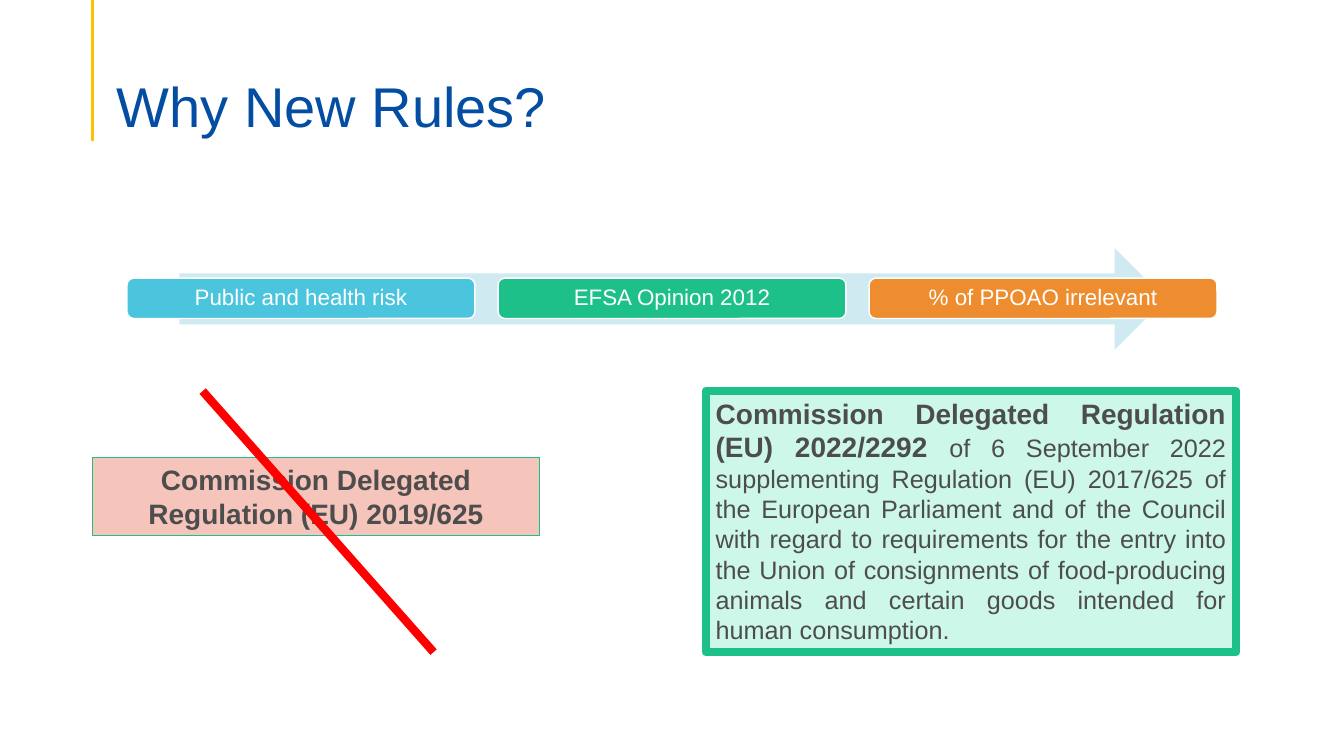
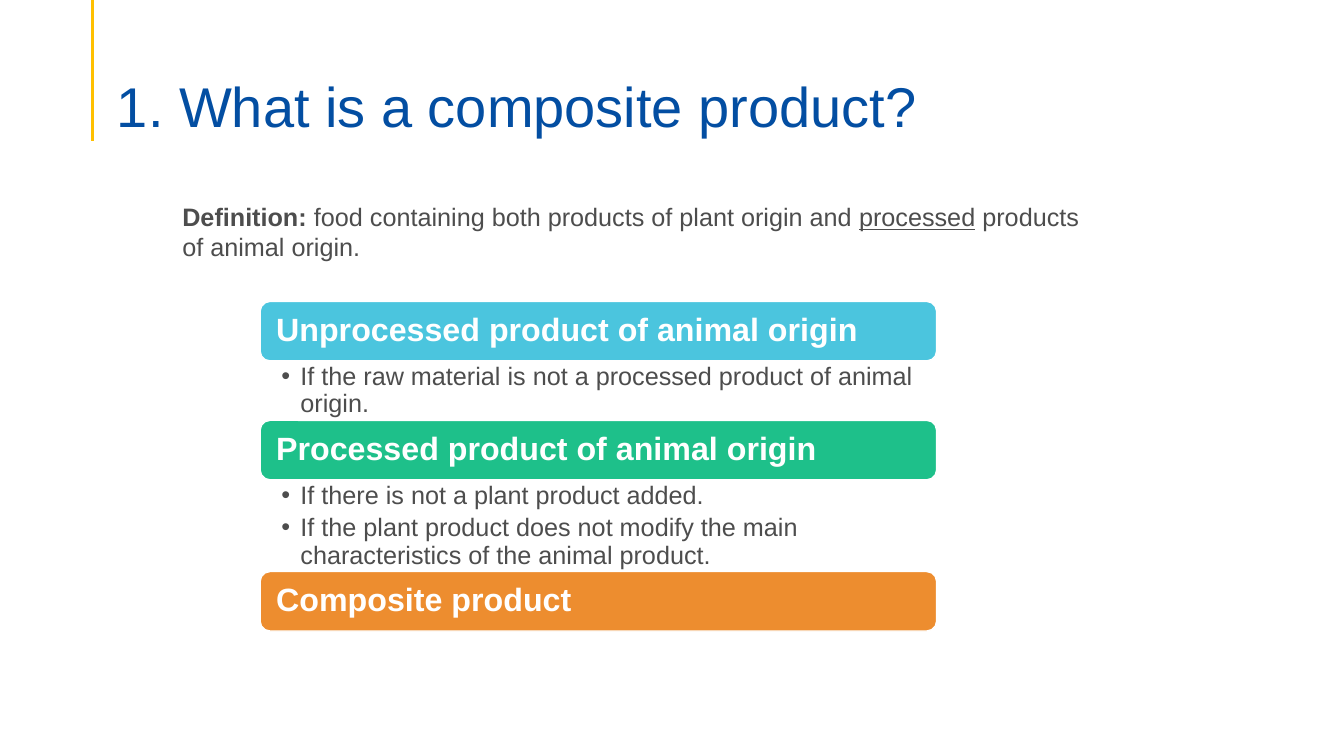
from lxml import etree
from pptx import Presentation
from pptx import util as u
from pptx.dml.color import RGBColor
from pptx.enum import shapes, text
from pptx.oxml.ns import qn

PX = u.Inches(1) // 100
FONT = "Arial"
TITLE_BLUE = RGBColor(0x03, 0x4E, 0xA2)
GOLD = RGBColor(0xFF, 0xC0, 0x00)
GREY = RGBColor(0x4D, 0x4D, 0x4D)
WHITE = RGBColor(0xFF, 0xFF, 0xFF)
CYAN = RGBColor(0x4B, 0xC5, 0xDE)
GREEN = RGBColor(0x1E, 0xC0, 0x8A)
ORANGE = RGBColor(0xED, 0x8D, 0x2F)
PALE_BLUE = RGBColor(0xD0, 0xEA, 0xF2)
PALE_RED = RGBColor(0xF5, 0xC4, 0xBA)
PALE_GREEN = RGBColor(0xCD, 0xF7, 0xE9)
RED = RGBColor(0xFF, 0x00, 0x00)

RECT = shapes.MSO_SHAPE.RECTANGLE
ROUNDED = shapes.MSO_SHAPE.ROUNDED_RECTANGLE
ALIGN = text.PP_ALIGN
ANCHOR = text.MSO_ANCHOR


def add_box(page, kind, place, fill, line=None, weight=1.0, margin=10):
    """Add a filled shape at (left, top, width, height) px, with equal side margins."""
    box = page.shapes.add_shape(kind, *[length * PX for length in place])
    box.shadow.inherit = False
    box.fill.solid()
    box.fill.fore_color.rgb = fill
    if line is None:
        box.line.fill.background()
    else:
        box.line.color.rgb = line
        box.line.width = u.Pt(weight)
    frame = box.text_frame
    frame.word_wrap = True
    frame.margin_left = frame.margin_right = margin * PX
    return box


def add_span(para, words, size, color=GREY, bold=False, underline=False):
    span = para.add_run()
    span.text = words
    span.font.name = FONT
    span.font.size = u.Pt(size)
    span.font.color.rgb = color
    span.font.bold = bold
    span.font.underline = underline


deck = Presentation()
deck.slide_width = 1333 * PX
deck.slide_height = 750 * PX
title_only, two_lists = deck.slide_layouts[5], deck.slide_layouts[3]

# Shared: title and gold rule; the red strike uses the same line settings
rules_page = deck.slides.add_slide(title_only)
product_page = deck.slides.add_slide(two_lists)

for page, heading in (
    (rules_page, "Why New Rules?"),
    (product_page, "1. What is a composite product?"),
):
    title = page.shapes.title
    title.left, title.top, title.width, title.height = [n * PX for n in (106, 53, 1150, 86)]
    frame = title.text_frame
    frame.auto_size = text.MSO_AUTO_SIZE.NONE
    frame.vertical_anchor = ANCHOR.BOTTOM
    frame.margin_bottom = 0
    para = frame.paragraphs[0]
    para.alignment = ALIGN.LEFT
    para.line_spacing = 0.9
    add_span(para, heading, 40, TITLE_BLUE)

# Slide 1: reasons on an arrow, old regulation and new regulation
add_box(rules_page, shapes.MSO_SHAPE.RIGHT_ARROW, (178, 246, 978, 101), PALE_BLUE)

reasons = (
    ("Public and health risk", CYAN),
    ("EFSA Opinion 2012", GREEN),
    ("% of PPOAO irrelevant", ORANGE),
)
for column, (reason, color) in enumerate(reasons):
    chip = add_box(rules_page, ROUNDED, (126 + 368 * column, 276, 345, 40), color, WHITE)
    para = chip.text_frame.paragraphs[0]
    para.alignment = ALIGN.CENTER
    para.line_spacing = 0.9
    add_span(para, reason, 16, WHITE)

old_rule = add_box(rules_page, RECT, (92, 454, 443, 77), PALE_RED, GREEN, 0.75)
para = old_rule.text_frame.paragraphs[0]
para.alignment = ALIGN.CENTER
add_span(para, "Commission Delegated Regulation (EU) 2019/625", 20, bold=True)

new_rule = add_box(rules_page, RECT, (700, 388, 526, 259), PALE_GREEN, GREEN, 6)
new_rule.text_frame.vertical_anchor = ANCHOR.TOP
para = new_rule.text_frame.paragraphs[0]
para.alignment = ALIGN.JUSTIFY
add_span(para, "Commission Delegated Regulation (EU) 2022/2292 ", 20, bold=True)
add_span(
    para,
    "of 6 September 2022 supplementing Regulation (EU) 2017/625 of the European "
    "Parliament and of the Council with regard to requirements for the entry into "
    "the Union of consignments of food-producing animals and certain goods intended "
    "for human consumption.",
    18,
)

for page, ends, color, weight in (
    (rules_page, (92, 0, 92, 140), GOLD, 2.25),
    (product_page, (92, 0, 92, 140), GOLD, 2.25),
    (rules_page, (201, 388, 430, 647), RED, 6),
):
    rule = page.shapes.add_connector(
        shapes.MSO_CONNECTOR.STRAIGHT, *[end * PX for end in ends]
    )
    rule.line.color.rgb = color
    rule.line.width = u.Pt(weight)
    etree.SubElement(rule.element.spPr, qn("a:effectLst"))

# Slide 2: definition, then coloured bands with lists between them
definition = product_page.shapes.add_textbox(*[n * PX for n in (171, 195, 925, 71)])
definition.text_frame.word_wrap = True
para = definition.text_frame.paragraphs[0]
add_span(para, "Definition:", 18, bold=True)
add_span(para, " food containing both products of plant origin and ", 18)
add_span(para, "processed", 18, underline=True)
add_span(para, " products of animal origin.", 18)

BAND_LEFT, BAND_WIDTH, BAND_HEIGHT = 258, 671, 59
bands = (
    ("Unprocessed product of animal origin", CYAN, 59, (
        "If the raw material is not a processed product of animal origin.",
    )),
    ("Processed product of animal origin", GREEN, 91, (
        "If there is not a plant product added.",
        "If the plant product does not modify the main characteristics of the animal product.",
    )),
    ("Composite product", ORANGE, 0, ()),
)
list_holders = [holder for holder in product_page.placeholders
                if holder.placeholder_format.idx > 0]
top = 299
for row, (name, color, list_height, points) in enumerate(bands):
    band = add_box(product_page, ROUNDED, (BAND_LEFT, top, BAND_WIDTH, BAND_HEIGHT),
                   color, WHITE, margin=13)
    para = band.text_frame.paragraphs[0]
    para.alignment = ALIGN.LEFT
    para.line_spacing = 0.9
    add_span(para, name, 23, WHITE, bold=True)
    top += BAND_HEIGHT
    if points:
        holder = list_holders[row]
        holder.left, holder.top = BAND_LEFT * PX, top * PX
        holder.width, holder.height = BAND_WIDTH * PX, list_height * PX
        frame = holder.text_frame
        frame.auto_size = text.MSO_AUTO_SIZE.NONE
        frame.vertical_anchor = ANCHOR.TOP
        frame.margin_left, frame.margin_right = 21 * PX, 18 * PX
        frame.margin_top = frame.margin_bottom = 3 * PX
        for number, point in enumerate(points):
            para = frame.add_paragraph() if number else frame.paragraphs[0]
            properties = para._p.get_or_add_pPr()
            properties.set("marL", str(19 * PX))
            properties.set("indent", str(-19 * PX))
            etree.SubElement(properties, qn("a:buChar"), char="•")
            para.line_spacing = 0.9
            para.space_before = u.Pt(0)
            para.space_after = u.Pt(3.6)
            add_span(para, point, 18)
    top += list_height

deck.save("out.pptx")
